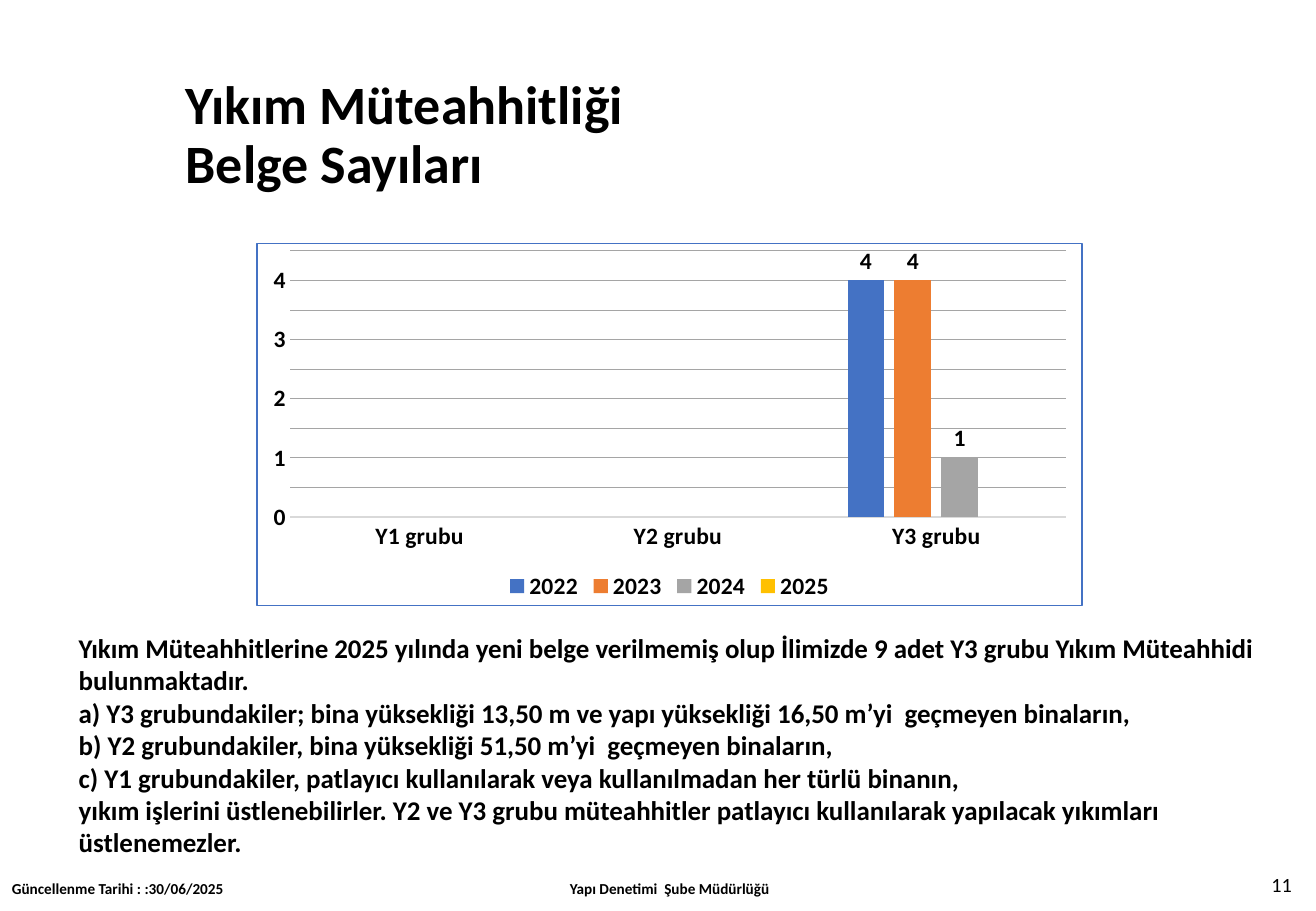
from dataclasses import dataclass

from lxml import etree
from pptx import Presentation, util as u
from pptx.chart.data import CategoryChartData
from pptx.dml.color import RGBColor
from pptx.enum import chart as charts, text
from pptx.oxml import ns


@dataclass(frozen=True)
class Theme:
    font: str = "Calibri"
    ink: str = "000000"
    axis: str = "D9D9D9"
    grid: str = "A5A5A5"
    border: str = "4472C4"
    series: tuple = ("4472C4", "ED7D31", "A5A5A5", "FFC000")
    title: int = 32
    body: int = 16
    chart: int = 14
    number: int = 12
    footer: int = 9


THEME = Theme()
WIDTH, HEIGHT = u.Inches(10.83), u.Inches(7.5)

GROUPS = ["Y1 grubu", "Y2 grubu", "Y3 grubu"]
COUNTS = {
    "2022": (None, None, 4),
    "2023": (None, None, 4),
    "2024": (None, None, 1),
    "2025": (None, None, None),
}
# Places are percent of the slide: left, top, width, height
CHART_PLACE = (19.48, 26.67, 62.79, 39.87)

LEFT, CENTER, RIGHT = text.PP_ALIGN.LEFT, text.PP_ALIGN.CENTER, text.PP_ALIGN.RIGHT
TOP, MIDDLE = text.MSO_ANCHOR.TOP, text.MSO_ANCHOR.MIDDLE

TEXTS = [
    dict(place=(5.08, 68.67, 92.89, 26.53), size=THEME.body, lines=[
        "Yıkım Müteahhitlerine 2025 yılında yeni belge verilmemiş olup İlimizde 9 adet Y3 grubu "
        "Yıkım Müteahhidi bulunmaktadır.",
        "a) Y3 grubundakiler; bina yüksekliği 13,50 m ve yapı yüksekliği 16,50 m’yi  geçmeyen binaların,",
        "b) Y2 grubundakiler, bina yüksekliği 51,50 m’yi  geçmeyen binaların,",
        "c) Y1 grubundakiler, patlayıcı kullanılarak veya kullanılmadan her türlü binanın,",
        "yıkım işlerini üstlenebilirler. Y2 ve Y3 grubu müteahhitler patlayıcı kullanılarak "
        "yapılacak yıkımları üstlenemezler.",
    ]),
    dict(place=(36.38, 95.87, 28.99, 3.33), size=THEME.footer, align=CENTER,
         lines=["Yapı Denetimi  Şube Müdürlüğü"]),
    dict(place=(13.2, 5.33, 69.9, 19.33), size=THEME.title, anchor=MIDDLE, spacing=0.9,
         lines=["Yıkım Müteahhitliği\vBelge Sayıları"]),
    dict(place=(76.55, 94.4, 22.53, 5.33), size=THEME.number, align=RIGHT, anchor=MIDDLE,
         bold=False, lines=["11"]),
    dict(place=(0, 95.87, 18.19, 3.33), size=THEME.footer, wrap=False,
         lines=["Güncellenme Tarihi : :30/06/2025"]),
]


def locate(place):
    return [round(side * share / 100) for side, share in zip((WIDTH, HEIGHT) * 2, place)]


def apply(target, **values):
    for name, value in values.items():
        setattr(target, name, value)


def style_font(font, size, bold=True):
    apply(font, name=THEME.font, size=u.Pt(size), bold=bold)
    font.color.rgb = RGBColor.from_string(THEME.ink)


def style_line(line, color, width):
    line.color.rgb = RGBColor.from_string(color)
    line.width = u.Pt(width)


def add_text(page, place, lines, size, align=LEFT, anchor=TOP, bold=True, wrap=True, spacing=None):
    frame = page.shapes.add_textbox(*locate(place)).text_frame
    apply(frame, word_wrap=wrap, vertical_anchor=anchor, text="\n".join(lines))
    for para in frame.paragraphs:
        apply(para, alignment=align, line_spacing=spacing)
        for span in para.runs:
            style_font(span.font, size, bold)


def outline_chart(chart, color, width):
    """Draw a border around the whole chart area."""
    area = etree.Element(ns.qn("c:spPr"))
    line = etree.SubElement(area, ns.qn("a:ln"), w=str(u.Pt(width)))
    fill = etree.SubElement(line, ns.qn("a:solidFill"))
    etree.SubElement(fill, ns.qn("a:srgbClr"), val=color)
    chart.element.find(ns.qn("c:chart")).addnext(area)


def add_counts(page):
    data = CategoryChartData(number_format="0")
    data.categories = GROUPS
    for year, counts in COUNTS.items():
        data.add_series(year, counts)
    kind = charts.XL_CHART_TYPE.COLUMN_CLUSTERED
    chart = page.shapes.add_chart(kind, *locate(CHART_PLACE), data).chart
    apply(chart, has_title=False, has_legend=True)
    style_font(chart.font, THEME.chart)
    outline_chart(chart, THEME.border, 0.75)
    apply(chart.legend, position=charts.XL_LEGEND_POSITION.BOTTOM, include_in_layout=False)
    style_font(chart.legend.font, THEME.chart)

    for axis in (chart.category_axis, chart.value_axis):
        apply(axis, major_tick_mark=charts.XL_TICK_MARK.NONE,
              minor_tick_mark=charts.XL_TICK_MARK.NONE)
        style_font(axis.tick_labels.font, THEME.chart)
    style_line(chart.category_axis.format.line, THEME.axis, 0.75)
    values = chart.value_axis
    apply(values, minimum_scale=0, maximum_scale=4.5, major_unit=0.5, has_major_gridlines=True)
    apply(values.tick_labels, number_format="0", number_format_is_linked=False)
    values.format.line.fill.background()
    style_line(values.major_gridlines.format.line, THEME.grid, 0.5)

    plot = chart.plots[0]
    apply(plot, gap_width=219, overlap=-27, vary_by_categories=False)
    for series, color in zip(plot.series, THEME.series):
        series.format.fill.solid()
        series.format.fill.fore_color.rgb = RGBColor.from_string(color)
        apply(series.data_labels, show_value=True,
              position=charts.XL_LABEL_POSITION.OUTSIDE_END)
        style_font(series.data_labels.font, THEME.chart)


def main():
    deck = Presentation()
    apply(deck, slide_width=WIDTH, slide_height=HEIGHT)
    page = deck.slides.add_slide(deck.slide_layouts[6])
    add_counts(page)
    for block in TEXTS:
        add_text(page, **block)
    deck.save("out.pptx")


if __name__ == "__main__":
    main()
